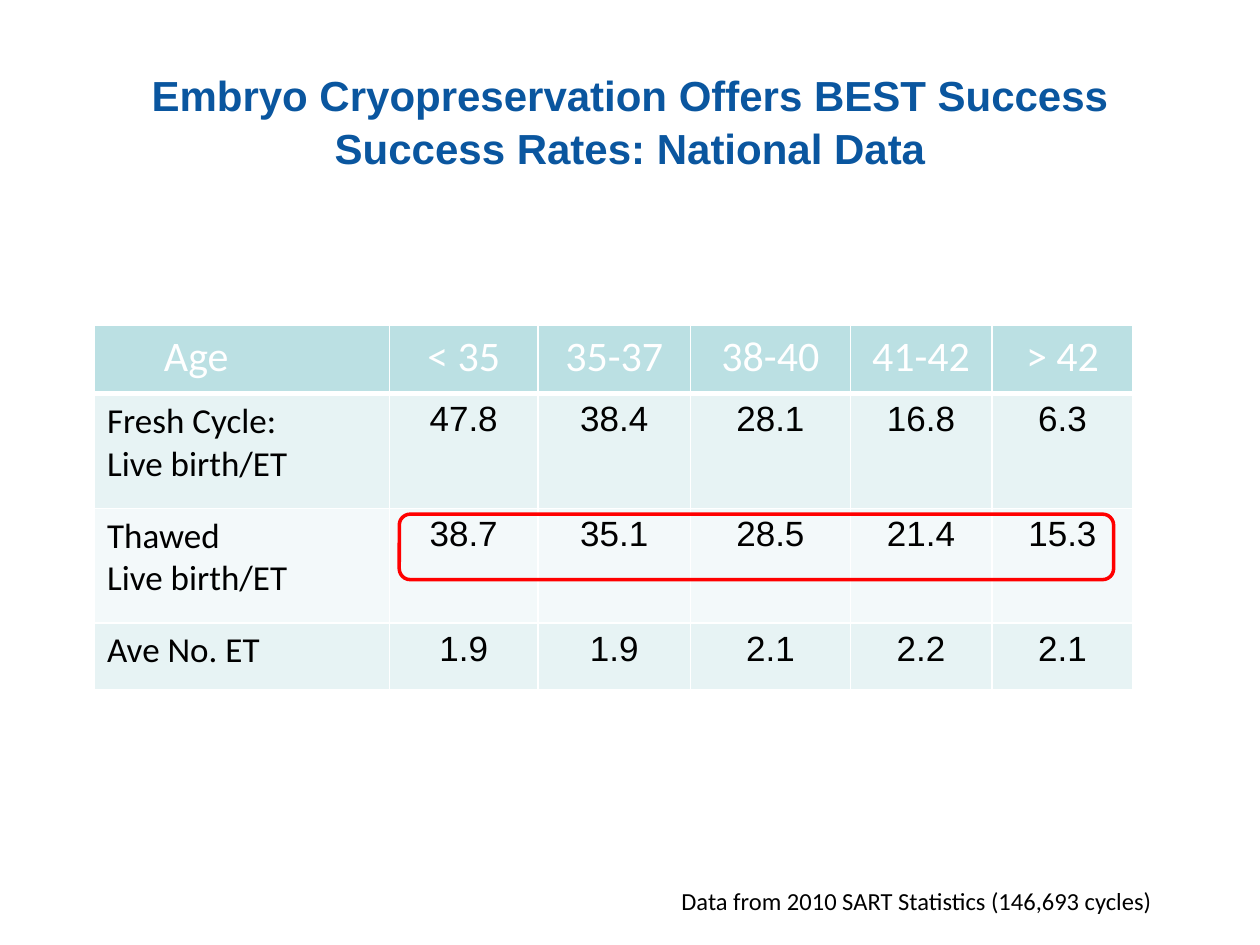
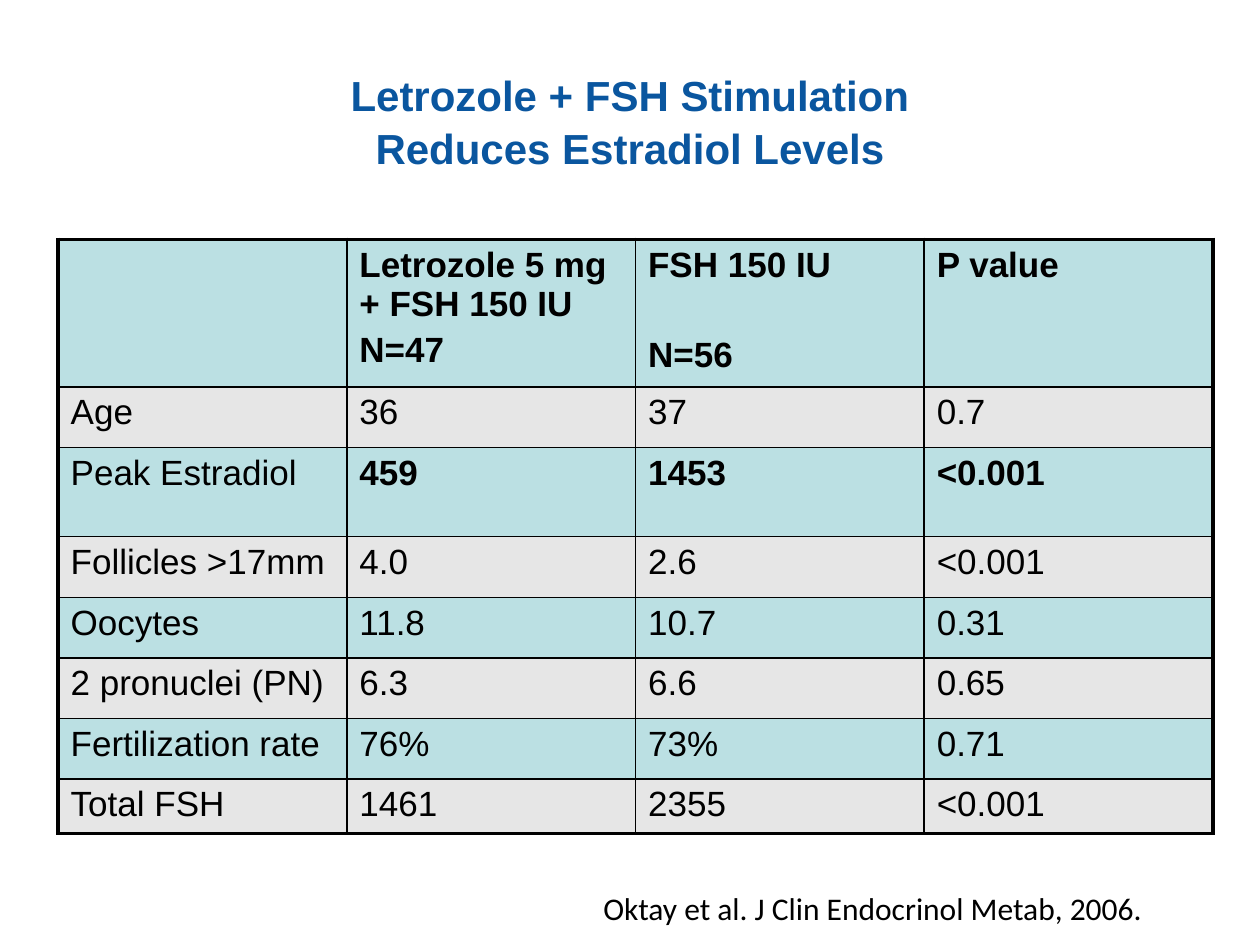
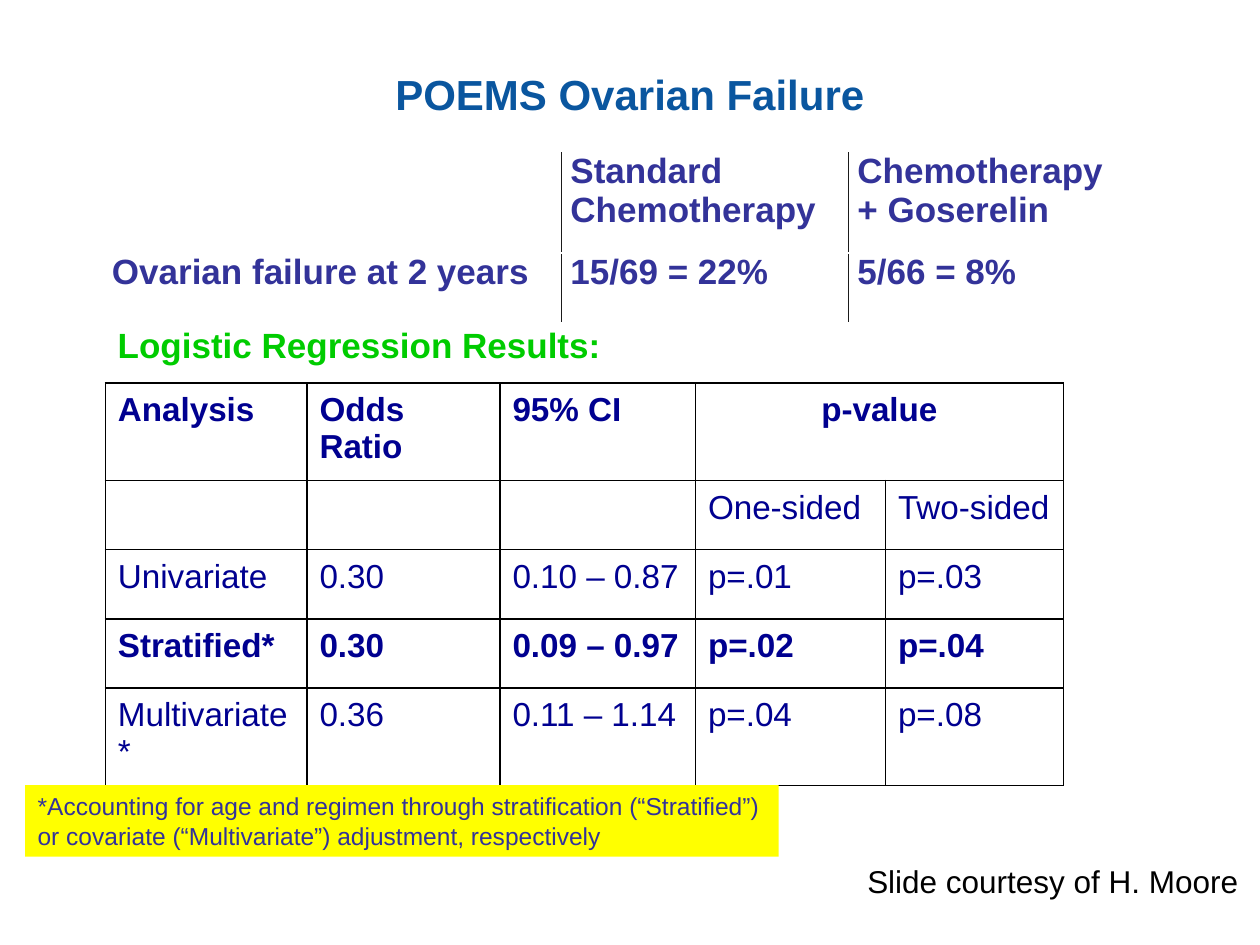
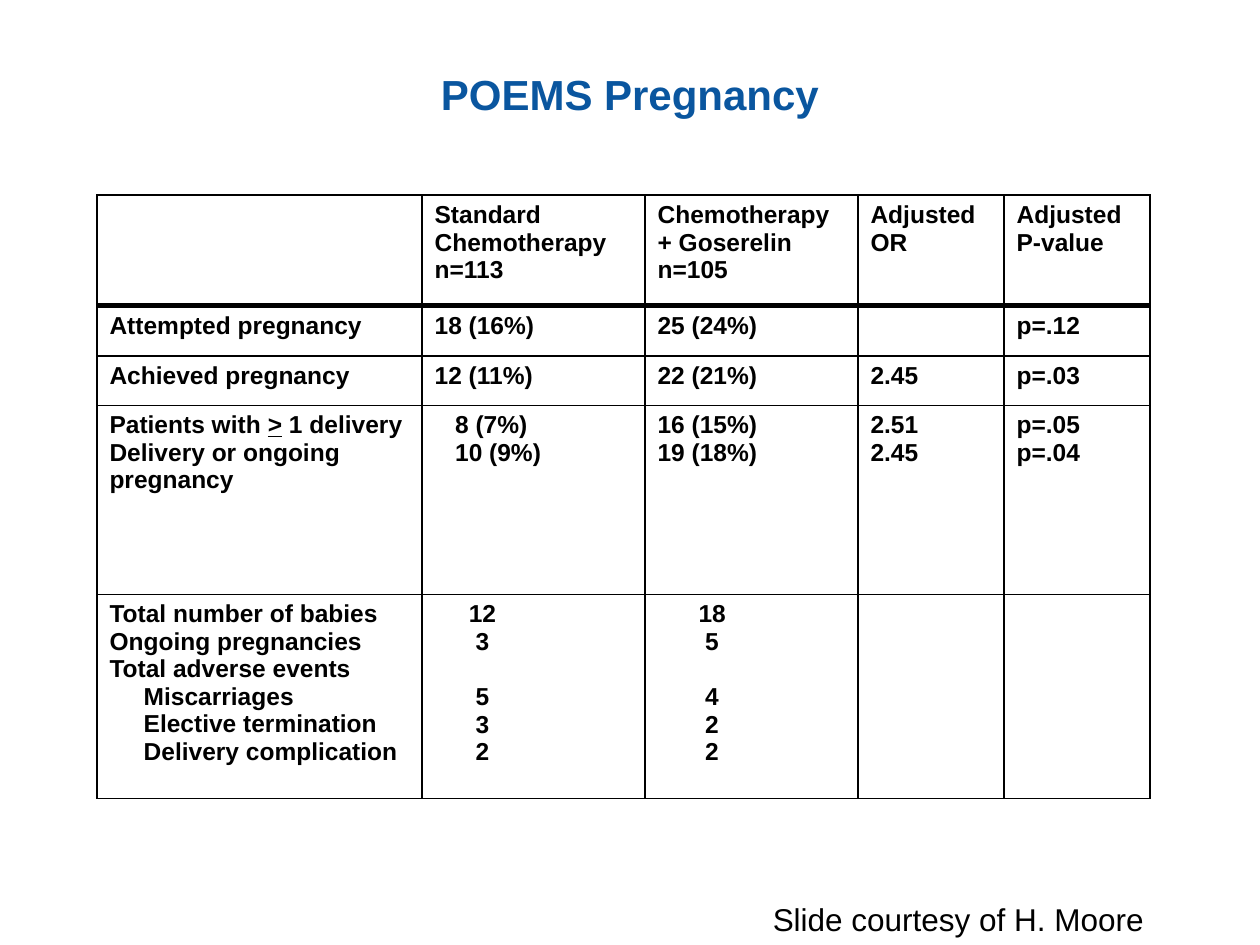
import itertools

import pptx
import pptx.dml.color
import pptx.enum.shapes
import pptx.enum.text
import pptx.util
from lxml import etree

Pt = pptx.util.Pt
ALIGN = pptx.enum.text.PP_ALIGN
ANCHOR = pptx.enum.text.MSO_ANCHOR
NS = "http://schemas.openxmlformats.org/drawingml/2006/main"

COLORS = {
    "title": "0A569F", "black": "000000", "white": "FFFFFF", "teal": "BBE0E3",
    "teal_light": "E7F3F4", "teal_pale": "F3F9FA", "grey": "E6E6E6",
    "rule": "1A1A1A", "indigo": "333399", "navy": "000090", "green": "00CC00",
    "yellow": "FFFF00", "red": "FF0000",
}

# Content. A cell is a paragraph or a list of paragraphs; a paragraph is a
# string or (text, indent, space before); text may be a list of (run, underline).
AGE_RATES = {
    "at": (54, 186), "font": "Arial", "label_font": "Calibri", "size": 20, "color": "black",
    "header": {"font": "Calibri", "size": 24, "color": "white"},
    "cols": (168.5, 85, 87.1, 91.4, 80.8, 80.8), "rows": (38.9, 65.6, 65.6, 38),
    "fills": ("teal", "teal_light", "teal_pale", "teal_light"),
    "centered": list(itertools.product(range(4), range(1, 6))),
    "lines": {"outer": ("white", 1), "across": ("white", 1), "down": ("white", 1),
              "header": ("white", 3)},
    "cells": [
        [("Age", 32.5, 0), "< 35", "35-37", "38-40", "41-42", "> 42"],
        [["Fresh Cycle:", "Live birth/ET"], "47.8", "38.4", "28.1", "16.8", "6.3"],
        [["Thawed", "Live birth/ET"], "38.7", "35.1", "28.5", "21.4", "15.3"],
        ["Ave No. ET", "1.9", "1.9", "2.1", "2.2", "2.1"],
    ],
}

LETROZOLE = {
    "at": (33.2, 136.8), "font": "Arial", "size": 20, "color": "black",
    "bold_rows": (0, 2), "plain_labels": True,
    "cols": (165,) * 4, "rows": (82.8, 34.6, 51.1, 34.6, 34.6, 34.6, 34.6, 28.8),
    "fills": ("teal", "grey") * 4,
    "lines": {"outer": ("black", 2.25), "across": ("black", 1), "down": ("black", 1)},
    "cells": [
        ["", ["Letrozole 5 mg + FSH 150 IU", ("N=47", 0, 4)],
         ["FSH 150 IU", ("N=56", 0, 29)], "P value"],
        ["Age", "36", "37", "0.7"],
        ["Peak Estradiol", "459", "1453", "<0.001"],
        ["Follicles >17mm", "4.0", "2.6", "<0.001"],
        ["Oocytes", "11.8", "10.7", "0.31"],
        ["2 pronuclei (PN)", "6.3", "6.6", "0.65"],
        ["Fertilization rate", "76%", "73%", "0.71"],
        ["Total FSH", "1461", "2355", "<0.001"],
    ],
}

FAILURE_RATES = {
    "at": (59, 87), "font": "Arial", "size": 20, "color": "indigo", "bold_rows": (0, 1),
    "cols": (262, 164, 154), "rows": (57.6, 39.6), "margins": (5, 0),
    "lines": {"outer": None, "across": ("white", 1.5), "down": ("rule", 1)},
    "cells": [
        ["", "Standard Chemotherapy", ["Chemotherapy", "+ Goserelin"]],
        ["Ovarian failure at 2 years", "15/69 = 22%", "5/66 = 8%"],
    ],
}

BLACK_GRID = {"outer": ("black", 1), "across": ("black", 1), "down": ("black", 1)}

REGRESSION = {
    "at": (60.2, 218.9), "font": "Arial", "size": 19, "color": "navy", "bold_rows": (0, 3),
    "cols": (115.2, 110.3, 111.7, 108.6, 101.6), "rows": (55.4, 39.6, 39.6, 39.6, 55.4),
    "margins": (7.2, 5), "merge": ((0, 3), (0, 4)), "centered": [(0, 3)],
    "lines": BLACK_GRID,
    "cells": [
        ["Analysis", "Odds Ratio", "95% CI", "p-value", None],
        ["", "", "", "One-sided", "Two-sided"],
        ["Univariate", "0.30", "0.10 – 0.87", "p=.01", "p=.03"],
        ["Stratified*", "0.30", "0.09 – 0.97", "p=.02", "p=.04"],
        ["Multivariate*", "0.36", "0.11 – 1.14", "p=.04", "p=.08"],
    ],
}

PREGNANCY = {
    "at": (55.4, 111.4), "font": "Arial", "size": 14, "color": "black",
    "bold_rows": range(5),
    "cols": (185.8, 127.4, 121.7, 83.5, 83.5), "rows": (63.2, 28.2, 28.2, 108, 116.6),
    "lines": {**BLACK_GRID, "header": ("black", 3)},
    "cells": [
        ["", ["Standard Chemotherapy", "n=113"], ["Chemotherapy", "+ Goserelin", "n=105"],
         ["Adjusted", "OR"], ["Adjusted", "P-value"]],
        ["Attempted pregnancy", "18 (16%)", "25 (24%)", "", "p=.12"],
        ["Achieved pregnancy", "12 (11%)", "22 (21%)", "2.45", "p=.03"],
        [[([("Patients with ", False), (">", True), (" 1 delivery", False)], 0, 0),
          "Delivery or ongoing pregnancy"],
         [("8 (7%)", 11.7, 0), ("10 (9%)", 11.7, 0)],
         ["16 (15%)", "19 (18%)"], ["2.51", "2.45"], ["p=.05", "p=.04"]],
        [["Total number of babies", "Ongoing pregnancies", "Total adverse events",
          ("Miscarriages", 19.5, 0), ("Elective termination", 19.5, 0),
          ("Delivery complication", 19.5, 0)],
         [("12", 19.5, 0), ("3", 23.4, 0), ("5", 23.4, 16), ("3", 23.4, 0), ("2", 23.4, 0)],
         [("18", 23.4, 0), ("5", 27.2, 0), ("4", 27.2, 16), ("2", 27.2, 0), ("2", 27.2, 0)],
         "", ""],
    ],
}

COURTESY = {"text": [("Slide courtesy of H. Moore", 86, 0)], "size": 18, "wrap": True}

SLIDES = [
    {"title": ["Embryo Cryopreservation Offers BEST Success", "Success Rates: National Data"],
     "title_at": (54.7, 31.7, 610.6, 128.2), "title_bottom": 58,
     "tables": [AGE_RATES],
     "notes": [{"text": ["Data from 2010 SART Statistics (146,693 cycles)"], "size": 14,
                "font": "Calibri", "at": (382.3, 502.6, 285.8, 24.5)}],
     "highlight": (228.2, 293.8, 408.2, 37.4)},
    {"title": ["Letrozole + FSH Stimulation", "Reduces Estradiol Levels"],
     "title_at": (36, 36, 648, 65),
     "tables": [LETROZOLE],
     "notes": [{"text": ["Oktay et al. J Clin Endocrinol Metab, 2006."], "size": 18,
                "font": "Calibri", "at": (337.7, 504.7, 326.2, 28.8)}]},
    {"title": ["POEMS Ovarian Failure"],
     "tables": [FAILURE_RATES, REGRESSION],
     "notes": [{"text": ["Logistic Regression Results:"], "size": 20, "color": "green",
                "bold": True, "at": (60.2, 181.4, 293, 31.7)},
               {"text": ["*Accounting for age and regimen through stratification (“Stratified”)",
                         "or covariate (“Multivariate”) adjustment, respectively"],
                "size": 14, "color": "indigo", "fill": "yellow",
                "at": (14.4, 448.6, 430.6, 41)},
               {**COURTESY, "at": (402.5, 488.9, 317.5, 28.8)}]},
    {"title": ["POEMS Pregnancy"],
     "tables": [PREGNANCY],
     "notes": [{**COURTESY, "at": (348.5, 510.5, 317.5, 28.8)}]},
]


def rgb(name):
    return pptx.dml.color.RGBColor.from_string(COLORS[name])


def place(box):
    return [Pt(length) for length in box]


# Text
def add_run(paragraph, text, font, size, color, bold, underline=False):
    run = paragraph.add_run()
    run.text = text
    run.font.name, run.font.size, run.font.bold = font, Pt(size), bold
    run.font.color.rgb = rgb(color)
    if underline:
        run.font.underline = True


def write(frame, lines, align=ALIGN.LEFT, **style):
    for number, line in enumerate(lines):
        text, indent, before = (line, 0, 0) if isinstance(line, str) else line
        paragraph = frame.add_paragraph() if number else frame.paragraphs[0]
        paragraph.alignment = align
        if indent:
            paragraph._p.get_or_add_pPr().set("marL", str(Pt(indent)))
        if before:
            paragraph.space_before = Pt(before)
        for words, underline in [(text, False)] if isinstance(text, str) else text:
            add_run(paragraph, words, underline=underline, **style)


def add_title(slide, lines, box=(36, 8, 648, 90), bottom=3.6):
    frame = slide.shapes.add_textbox(*place(box)).text_frame
    frame.word_wrap = True
    frame.vertical_anchor = ANCHOR.MIDDLE
    frame.margin_bottom = Pt(bottom)
    paragraph = frame.paragraphs[0]
    paragraph.alignment = ALIGN.CENTER
    paragraph.line_spacing = 1.05
    for number, line in enumerate(lines):
        if number:
            paragraph.add_line_break()
        add_run(paragraph, line, "Arial", 24, "title", True)


def add_note(slide, note):
    box = slide.shapes.add_textbox(*place(note["at"]))
    if "fill" in note:
        box.fill.solid()
        box.fill.fore_color.rgb = rgb(note["fill"])
    box.text_frame.word_wrap = note.get("wrap", False)
    write(box.text_frame, note["text"], font=note.get("font", "Arial"), size=note["size"],
          color=note.get("color", "black"), bold=note.get("bold", False))


# Tables
def set_borders(cell, borders):
    properties = cell._tc.get_or_add_tcPr()
    for position, (side, border) in enumerate(borders.items()):
        line = etree.Element(f"{{{NS}}}{side}")
        if border:
            color, width = border
            line.set("w", str(Pt(width)))
            fill = etree.SubElement(line, f"{{{NS}}}solidFill")
            etree.SubElement(fill, f"{{{NS}}}srgbClr", val=COLORS[color])
        else:
            etree.SubElement(line, f"{{{NS}}}noFill")
        properties.insert(position, line)


def cell_borders(lines, row, col, last_row, last_col):
    def across(edge):
        if edge in (0, last_row + 1):
            return lines["outer"]
        return lines.get("header", lines["across"]) if edge == 1 else lines["across"]

    def down(edge):
        return lines["outer"] if edge in (0, last_col + 1) else lines["down"]

    return {"lnL": down(col), "lnR": down(col + 1), "lnT": across(row), "lnB": across(row + 1)}


def cell_style(spec, row, col):
    style = {key: spec[key] for key in ("font", "size", "color")}
    if col == 0:
        style["font"] = spec.get("label_font", spec["font"])
    if row == 0:
        style.update(spec.get("header", {}))
    plain = col == 0 and spec.get("plain_labels", False)
    style["bold"] = row in spec.get("bold_rows", ()) and not plain
    centered = (row, col) in spec.get("centered", ())
    style["align"] = ALIGN.CENTER if centered else ALIGN.LEFT
    return style


def add_grid(slide, spec):
    cols, rows = spec["cols"], spec["rows"]
    table = slide.shapes.add_table(
        len(rows), len(cols), *place((*spec["at"], sum(cols), sum(rows)))).table
    table.first_row = table.horz_banding = False
    for column, width in zip(table.columns, cols):
        column.width = Pt(width)
    for table_row, height in zip(table.rows, rows):
        table_row.height = Pt(height)
    if "merge" in spec:
        first, last = spec["merge"]
        table.cell(*first).merge(table.cell(*last))
    side, top = spec.get("margins", (7.2, 3.6))
    for row, col in itertools.product(range(len(rows)), range(len(cols))):
        cell, content = table.cell(row, col), spec["cells"][row][col]
        cell.margin_left = cell.margin_right = Pt(side)
        cell.margin_top = cell.margin_bottom = Pt(top)
        if "fills" in spec:
            cell.fill.solid()
            cell.fill.fore_color.rgb = rgb(spec["fills"][row])
        else:
            cell.fill.background()
        set_borders(cell, cell_borders(spec["lines"], row, col, len(rows) - 1, len(cols) - 1))
        if content is not None:
            lines = content if isinstance(content, list) else [content]
            write(cell.text_frame, lines, **cell_style(spec, row, col))


def add_highlight(slide, box):
    frame = slide.shapes.add_shape(
        pptx.enum.shapes.MSO_SHAPE.ROUNDED_RECTANGLE, *place(box))
    frame.shadow.inherit = False
    frame.fill.background()
    frame.line.color.rgb = rgb("red")
    frame.line.width = Pt(2)


def main():
    deck = pptx.Presentation()
    deck.slide_width, deck.slide_height = Pt(720), Pt(540)
    for content in SLIDES:
        slide = deck.slides.add_slide(deck.slide_layouts[6])
        add_title(slide, content["title"], content.get("title_at", (36, 8, 648, 90)),
                  content.get("title_bottom", 3.6))
        for spec in content["tables"]:
            add_grid(slide, spec)
        for note in content["notes"]:
            add_note(slide, note)
        if "highlight" in content:
            add_highlight(slide, content["highlight"])
    deck.save("out.pptx")


if __name__ == "__main__":
    main()
